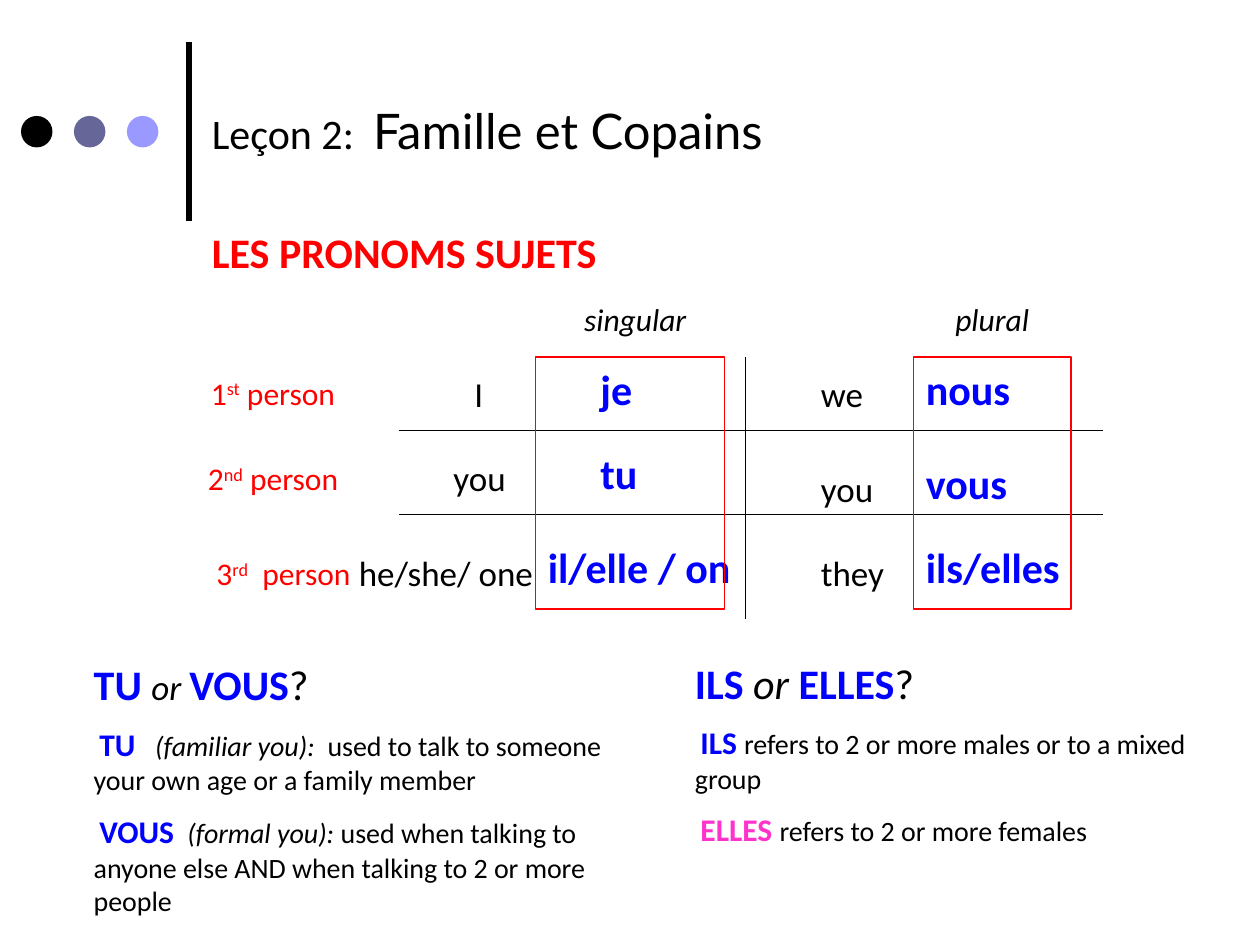
from lxml import etree
from pptx import Presentation
from pptx.dml.color import RGBColor
from pptx.enum.shapes import MSO_CONNECTOR, MSO_SHAPE
from pptx.enum.text import PP_ALIGN
from pptx.oxml.ns import qn
from pptx.util import Pt

LINE = MSO_CONNECTOR.STRAIGHT
RECT, OVAL = MSO_SHAPE.RECTANGLE, MSO_SHAPE.OVAL
LEFT, MID = PP_ALIGN.LEFT, PP_ALIGN.CENTER
BLACK, RED, BLUE, PINK = "000000", "FF0000", "0000FF", "FF33CC"


def color(code):
    return RGBColor.from_string(code)


def style(font, size=None, tint=None, look=None, face=None):
    """Set the given traits only; look holds b for bold, i for italic."""
    if size:
        font.size = Pt(size)
    if tint:
        font.color.rgb = color(tint)
    if look:
        font.bold = "b" in look
        font.italic = "i" in look
    if face:
        font.name = face


def run(text, size, tint=BLACK, look="", face="Calibri", base=0):
    return text, (size, tint, look, face), base


def write(slide, x, y, w, h, paras, align=LEFT):
    """Add a text box; traits shared by all runs go on the paragraph."""
    frame = slide.shapes.add_textbox(Pt(x), Pt(y), Pt(w), Pt(h)).text_frame
    frame.word_wrap = True
    for i, runs in enumerate(paras):
        para = frame.add_paragraph() if i else frame.paragraphs[0]
        para.alignment = align
        para.space_before = Pt(9 if i else 0)
        traits = list(zip(*(look for _, look, _ in runs)))
        same = [len(set(vals)) == 1 for vals in traits]
        style(para.font, *(v[0] if s else None for v, s in zip(traits, same)))
        for text, look, base in runs:
            part = para.add_run()
            part.text = text
            style(part.font, *(None if s else v for v, s in zip(look, same)))
            if base:
                part._r.get_or_add_rPr().set("baseline", str(base * 1000))


def rule(slide, x1, y1, x2, y2, width=0.75):
    line = slide.shapes.add_connector(LINE, Pt(x1), Pt(y1), Pt(x2), Pt(y2))
    line.line.color.rgb = color(BLACK)
    line.line.width = Pt(width)
    etree.SubElement(line._element.spPr, qn("a:effectLst"))


def shape(slide, kind, x, y, w, h, fill=None, edge=None):
    item = slide.shapes.add_shape(kind, Pt(x), Pt(y), Pt(w), Pt(h))
    item.shadow.inherit = False
    if fill:
        item.fill.solid()
        item.fill.fore_color.rgb = color(fill)
    else:
        item.fill.background()
    if edge:
        item.line.color.rgb = color(edge)
        item.line.width = Pt(1)
    else:
        item.line.fill.background()


def header(slide, x, y, w, h):
    rule(slide, x + 96, y, x + 96, y + h, 3)
    for i, fill in enumerate((BLACK, "666699", "9999FF")):
        shape(slide, OVAL, x + 30.25 * i, y + 42.25, 18, 18, fill)
    left = x + 102
    write(slide, left, y + 30, w - 102, 41, [[
        run("Leçon 2:  ", 24), run("Famille et Copains", 28, face="Lato")]])
    write(slide, left, y + h, 450, 36,
          [[run("LES PRONOMS SUJETS", 24, RED, "b")]])


def pronouns(slide, x, y, w, h):
    """Three persons down, singular and plural across."""
    rule(slide, x + 318, y + 36, x + 318, y + h)
    for dy in (78, 126):
        rule(slide, x + 120, y + dy, x + w, y + dy)

    # Each word: English, its left and width, French, its left and width, top
    words = (
        ("I", 156, 42, "je", 228, 78, 36),
        ("you", 144, 54, "tu", 228, 78, 84),
        ("he/she/ one", 90, 114, "il/elle / on", 198, 120, 138),
        ("we", 354, 78, "nous", 414, 108, 36),
        ("you", 354, 78, "vous", 414, 78, 90),
        ("they", 354, 66, "ils/elles", 414, 108, 138),
    )
    for eng, ex, ew, fr, fx, fw, top in words:
        write(slide, x + ex, y + top + 5.5, ew, 31, [[run(eng, 20)]])
        write(slide, x + fx, y + top, fw, 36, [[run(fr, 24, BLUE, "b")]])

    for name, dx, shift, wide in (("singular", 198, 12, 108),
                                  ("plural", 414, 0, 90)):
        shape(slide, RECT, x + dx, y + 36, wide, 144, edge=RED)
        write(slide, x + dx + shift, y, 90, 29,
              [[run(name, 18, look="i")]], MID)

    for num, end, tail, dx, dy in (("1", "st", " person", 0, 42),
                                   ("2", "nd", " person", 0, 91),
                                   ("3", "rd", "  person", 6, 145)):
        write(slide, x + dx, y + dy, 96, 29, [[
            run(num, 18, RED), run(end, 18, RED, base=30),
            run(tail, 18, RED)]], MID)


def note(slide, x, y, w, h, pair, mid, items):
    """A question about a pair of words, then a line on each."""
    first, last = pair
    paras = [[run(first + " ", 24, BLUE, "b"), run("or ", mid, look="i"),
              run(last, 24, BLUE, "b"), run("?", 24)]]
    for word, tint, hint, text in items:
        runs = [run(" ", 14), run(word + " ", 18, tint, "b")]
        if hint:
            runs.append(run(hint, 16, look="i"))
        paras.append(runs + [run(text, 16)])
    write(slide, x, y, w, h, paras)


def main():
    deck = Presentation()
    deck.slide_width, deck.slide_height = Pt(720), Pt(540)
    slide = deck.slides.add_slide(deck.slide_layouts[6])
    header(slide, 12, 24, 648, 102)
    pronouns(slide, 108, 168, 522, 186)
    note(slide, 46.5, 373, 313, 160, ("TU", "VOUS"), 20, (
        ("TU", BLUE, "  (familiar you):  ",
         "used to talk to someone your own age or a family member"),
        ("VOUS", BLUE, " (formal you): ",
         "used when talking to anyone else AND when talking to 2 or more"
         " people")))
    note(slide, 390, 372, 300, 138, ("ILS", "ELLES"), 24, (
        ("ILS", BLUE, "", "refers to 2 or more males or to a mixed group"),
        ("ELLES", PINK, "", "refers to 2 or more females")))
    deck.save("out.pptx")


if __name__ == "__main__":
    main()
